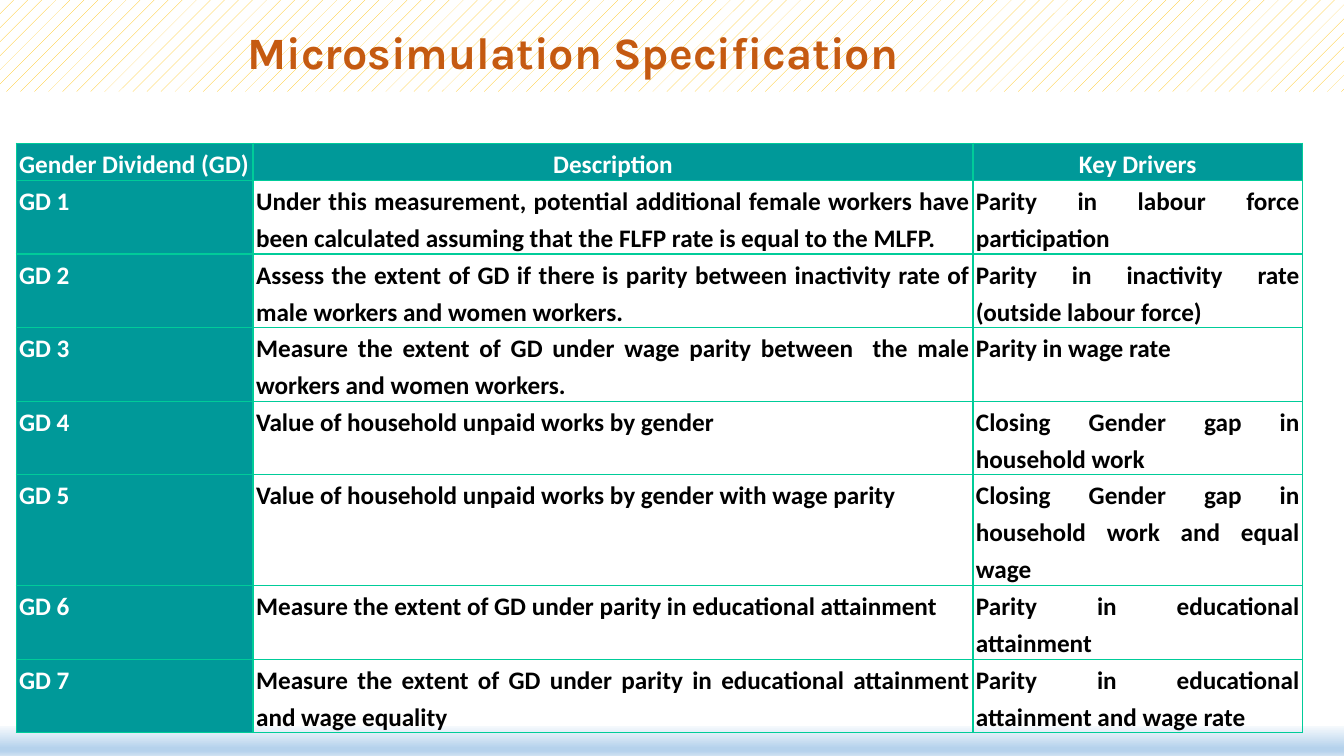
from typing import NamedTuple

from lxml.etree import SubElement
from pptx import Presentation
from pptx.dml.color import RGBColor
from pptx.enum.dml import MSO_PATTERN
from pptx.enum.shapes import MSO_SHAPE
from pptx.enum.text import MSO_ANCHOR, PP_ALIGN
from pptx.oxml.ns import qn
from pptx.util import Emu, Pt

PX = 9144  # EMU in one px, at 100 px to the inch
COLORS = {
    "white": "FFFFFF",
    "black": "000000",
    "amber": "FFC000",
    "title": "C55A11",
    "teal": "009999",
    "border": "00CC99",
}
FOOTER_STOPS = [(0, "F7FAFD"), (74, "B5D2EC"), (83, "B5D2EC"), (100, "CEE1F2")]


class Box(NamedTuple):
    left: int
    top: int
    width: int
    height: int

    def emu(self) -> list[Emu]:
        return [px(value) for value in self]


class Dividend(NamedTuple):
    name: str
    description: str
    driver: str
    height: int


HEADER_BAND = Box(0, 0, 1333, 91)
FOOTER_BAND = Box(0, 720, 1333, 30)
TITLE = Box(13, 8, 1111, 93)
COLUMN_WIDTHS = [235, 714, 327]
ROWS = [
    Dividend("Gender Dividend (GD)", "Description", "Key Drivers", 37),
    Dividend("GD 1", "Under this measurement, potential additional female workers have been "
             "calculated assuming that the FLFP rate is equal to the MLFP.",
             "Parity in labour force participation", 73),
    Dividend("GD 2", "Assess the extent of GD if there is parity between inactivity rate of "
             "male workers and women workers.",
             "Parity in inactivity rate (outside labour force)", 73),
    Dividend("GD 3", "Measure the extent of GD under wage parity between  the male workers "
             "and women workers.", "Parity in wage rate", 73),
    Dividend("GD 4", "Value of household unpaid works by gender",
             "Closing Gender gap in household work", 73),
    Dividend("GD 5", "Value of household unpaid works by gender with wage parity",
             "Closing Gender gap in household work and equal wage", 110),
    Dividend("GD 6", "Measure the extent of GD under parity in educational attainment",
             "Parity in educational attainment", 73),
    Dividend("GD 7", "Measure the extent of GD under parity in educational attainment and "
             "wage equality", "Parity in educational attainment and wage rate", 73),
]
TABLE = Box(16, 142, sum(COLUMN_WIDTHS), sum(row.height for row in ROWS))


def px(value: int) -> Emu:
    return Emu(value * PX)


def color(name: str) -> RGBColor:
    return RGBColor.from_string(COLORS[name])


def add_band(slide, box: Box):
    band = slide.shapes.add_shape(MSO_SHAPE.RECTANGLE, *box.emu())
    band.shadow.inherit = False
    band.line.fill.background()
    return band


def add_header_band(slide) -> None:
    fill = add_band(slide, HEADER_BAND).fill
    fill.patterned()
    fill.pattern = MSO_PATTERN.PERCENT_5
    fill.fore_color.rgb = color("amber")
    fill.back_color.rgb = color("white")


def add_footer_band(slide) -> None:
    band = add_band(slide, FOOTER_BAND)
    band.fill.gradient()
    band.fill.gradient_angle = 270
    stops = band.element.spPr.find(qn("a:gradFill")).find(qn("a:gsLst"))
    for stop in list(stops):
        stops.remove(stop)
    for percent, value in FOOTER_STOPS:
        stop = SubElement(stops, qn("a:gs"), pos=str(percent * 1000))
        SubElement(stop, qn("a:srgbClr"), val=value)


def style_font(paragraph, name: str, size: int, color_name: str) -> None:
    font = paragraph.font
    font.name, font.size, font.bold = name, Pt(size), True
    font.color.rgb = color(color_name)


def add_title(slide) -> None:
    frame = slide.shapes.add_textbox(*TITLE.emu()).text_frame
    frame.word_wrap = True
    frame.vertical_anchor = MSO_ANCHOR.MIDDLE
    paragraph = frame.paragraphs[0]
    paragraph.text = "Microsimulation Specification"
    paragraph.alignment = PP_ALIGN.CENTER
    paragraph.line_spacing = 0.9
    style_font(paragraph, "Karla", 32, "title")


def add_borders(cell) -> None:
    properties = cell._tc.get_or_add_tcPr()
    for index, side in enumerate(("lnL", "lnR", "lnT", "lnB")):
        line = SubElement(properties, qn(f"a:{side}"), w=str(Pt(1)))
        fill = SubElement(line, qn("a:solidFill"))
        SubElement(fill, qn("a:srgbClr"), val=COLORS["border"])
        properties.insert(index, line)


def fill_cell(cell, text: str, row: int, column: int) -> None:
    is_heading = row == 0 or column == 0
    cell.margin_left = cell.margin_right = px(3)
    cell.margin_top = cell.margin_bottom = 0
    if is_heading:
        cell.fill.solid()
        cell.fill.fore_color.rgb = color("teal")
    else:
        cell.fill.background()
    add_borders(cell)
    paragraph = cell.text_frame.paragraphs[0]
    paragraph.text = text
    paragraph.alignment = PP_ALIGN.CENTER if row == 0 and column else PP_ALIGN.JUSTIFY
    paragraph.line_spacing = 1.2
    paragraph.space_after = Pt(8)
    style_font(paragraph, "Calibri", 18, "white" if is_heading else "black")


def add_dividend_table(slide) -> None:
    frame = slide.shapes.add_table(len(ROWS), len(COLUMN_WIDTHS), *TABLE.emu())
    table = frame.table
    table.first_row = table.horz_banding = False
    for column, width in zip(table.columns, COLUMN_WIDTHS):
        column.width = px(width)
    for row, dividend in enumerate(ROWS):
        table.rows[row].height = px(dividend.height)
        texts = (dividend.name, dividend.description, dividend.driver)
        for column, text in enumerate(texts):
            fill_cell(table.cell(row, column), text, row, column)


def main() -> None:
    presentation = Presentation()
    presentation.slide_width, presentation.slide_height = px(1333), px(750)
    slide = presentation.slides.add_slide(presentation.slide_layouts[6])
    add_header_band(slide)
    add_footer_band(slide)
    add_title(slide)
    add_dividend_table(slide)
    presentation.save("out.pptx")


if __name__ == "__main__":
    main()
